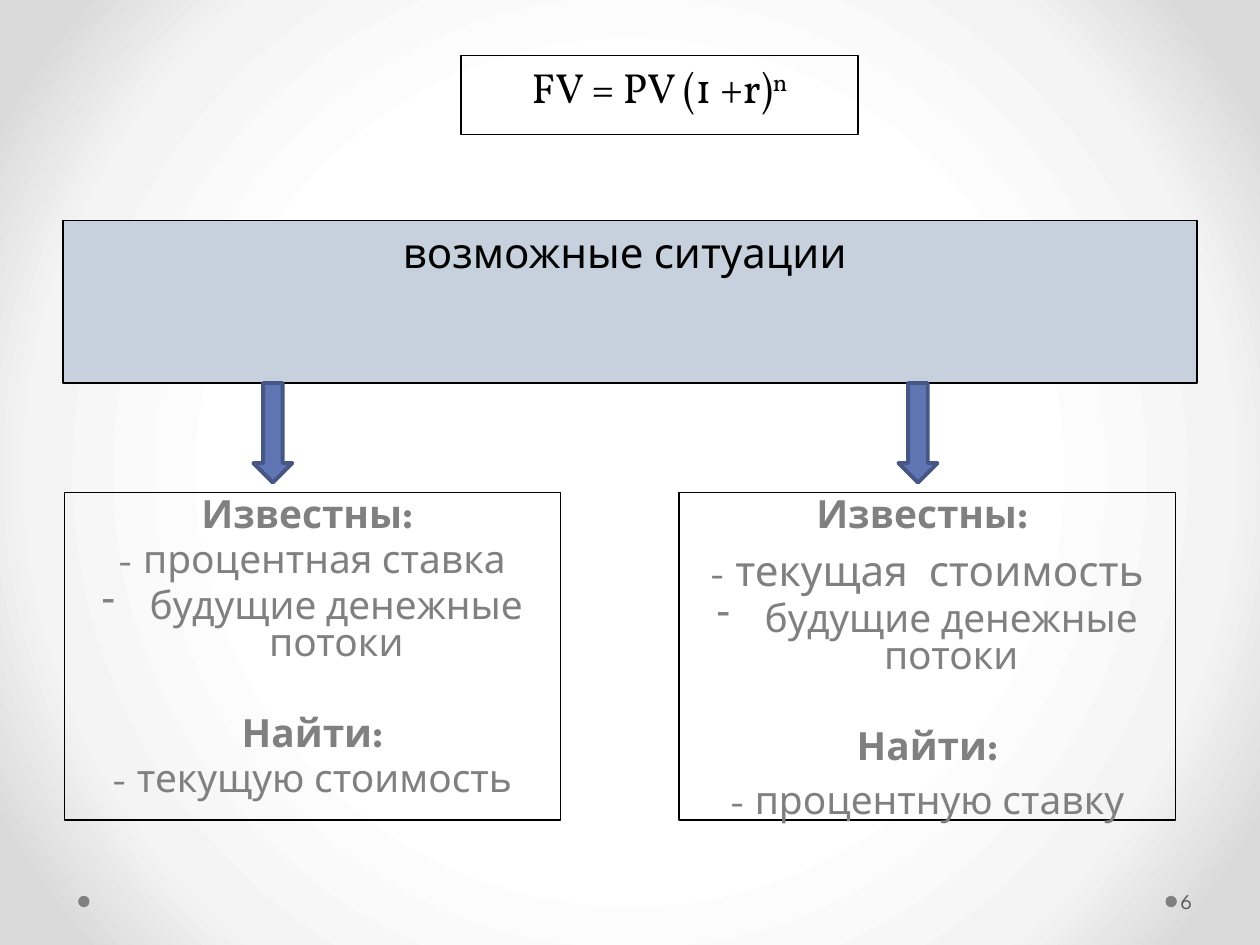
from dataclasses import dataclass

from lxml.etree import SubElement
from pptx import Presentation
from pptx.dml.color import RGBColor
from pptx.enum.shapes import MSO_SHAPE
from pptx.enum.text import MSO_ANCHOR, MSO_AUTO_SIZE, PP_ALIGN
from pptx.oxml import parse_xml
from pptx.oxml.ns import nsdecls, qn
from pptx.util import Inches, Pt

SANS = "League Spartan"
SERIF = "Vollkorn"
BLACK = "000000"
GRAY = "808080"
SMALL = 22.2
LARGE = 24.1
SECTION_GAP = 30.5


@dataclass
class Run:
    text: str
    size: float = SMALL
    bold: bool = False
    color: str = GRAY
    font: str = SANS
    superscript: bool = False


@dataclass
class Line:
    runs: list[Run]
    spacing: float = 0.8
    before: float = 4.5
    bullet: str = ""


@dataclass
class Situation:
    left: float
    arrow_left: float
    lines: list[Line]


KNOWN = Line([Run("Известны: ", bold=True)])
CASH_FLOWS = Line([Run("будущие денежные потоки")], bullet="-")
FIND = Line([Run("Найти:", bold=True)], before=SECTION_GAP)

SITUATIONS = [
    Situation(0.51, 2.01, [
        KNOWN,
        Line([Run("- процентная ставка")]),
        CASH_FLOWS,
        FIND,
        Line([Run("- текущую стоимость")]),
    ]),
    Situation(5.39, 7.13, [
        KNOWN,
        Line([Run("- "), Run("текущая  стоимость", LARGE)], spacing=1),
        CASH_FLOWS,
        FIND,
        Line([Run("- процентную ставку")], spacing=1),
    ]),
]
FORMULA = Line([
    Run("FV = PV (1 +r)", 24, color=BLACK, font=SERIF),
    Run("n", 24, color=BLACK, font=SERIF, superscript=True),
], spacing=1)
HEADING = Line([Run("возможные ситуации ", 24, color=BLACK)], spacing=1)


def rgb(color: str) -> RGBColor:
    return RGBColor.from_string(color)


def set_background(slide) -> None:
    """Give the slide a gradient that darkens from the centre outwards."""
    stops = "".join(
        f'<a:gs pos="{position * 1000}"><a:srgbClr val="{color}"/></a:gs>'
        for position, color in [(50, "FFFFFF"), (76, "F4F4F4"), (92, "DADADA")]
    )
    background = parse_xml(
        f'<p:bg {nsdecls("p", "a")}><p:bgPr><a:gradFill rotWithShape="1">'
        f'<a:gsLst>{stops}</a:gsLst><a:path path="circle">'
        '<a:fillToRect l="50000" t="50000" r="50000" b="50000"/></a:path>'
        '</a:gradFill><a:effectLst/></p:bgPr></p:bg>'
    )
    slide.element.cSld.insert(0, background)


def place(shape, left: float, top: float, width: float, height: float) -> None:
    shape.left, shape.top = Inches(left), Inches(top)
    shape.width, shape.height = Inches(width), Inches(height)


def style_shape(shape, fill: str = "", line: str = "", width: float = 0.75) -> None:
    """Set fill and outline; an empty colour means none."""
    if fill:
        shape.fill.solid()
        shape.fill.fore_color.rgb = rgb(fill)
    else:
        shape.fill.background()
    if line:
        shape.line.color.rgb = rgb(line)
        shape.line.width = Pt(width)
    else:
        shape.line.fill.background()


def add_preset(slide, kind: MSO_SHAPE, left: float, top: float, width: float, height: float):
    shape = slide.shapes.add_shape(
        kind, Inches(left), Inches(top), Inches(width), Inches(height))
    shape.shadow.inherit = False
    return shape


def format_run(run, source: Run) -> None:
    run.font.name = source.font
    run.font.size = Pt(source.size)
    run.font.bold = source.bold
    run.font.color.rgb = rgb(source.color)
    if source.superscript:
        run.font._element.set("baseline", "30000")


def write_lines(shape, lines: list[Line]) -> None:
    """Fill a shape with centred paragraphs that have a hanging indent."""
    text_frame = shape.text_frame
    text_frame.word_wrap = True
    text_frame.auto_size = MSO_AUTO_SIZE.NONE
    text_frame.vertical_anchor = MSO_ANCHOR.TOP
    for index, line in enumerate(lines):
        paragraph = text_frame.add_paragraph() if index else text_frame.paragraphs[0]
        paragraph.alignment = PP_ALIGN.CENTER
        paragraph.line_spacing = line.spacing
        paragraph.space_before = Pt(line.before)
        properties = paragraph._p.get_or_add_pPr()
        properties.set("marL", str(Inches(0.38)))
        properties.set("indent", str(-Inches(0.38)))
        if line.bullet:
            SubElement(properties, qn("a:buChar")).set("char", line.bullet)
        else:
            SubElement(properties, qn("a:buNone"))
        for source in line.runs:
            run = paragraph.add_run()
            run.text = source.text
            format_run(run, source)


def add_situation(slide, situation: Situation) -> None:
    arrow = add_preset(slide, MSO_SHAPE.UP_ARROW, situation.arrow_left, 3.04, 0.31, 0.79)
    arrow.rotation = 180
    style_shape(arrow, "6076B4", "475785", 2.25)
    box = add_preset(slide, MSO_SHAPE.RECTANGLE, situation.left, 3.91, 3.94, 2.6)
    style_shape(box, line=BLACK)
    write_lines(box, situation.lines)


def add_footer(slide, number: str) -> None:
    for left in (0.62, 9.25):
        dot = add_preset(slide, MSO_SHAPE.OVAL, left, 7.11, 0.09, 0.09)
        style_shape(dot, GRAY)
    box = slide.shapes.add_textbox(Inches(9.34), Inches(6.95), Inches(0.61), Inches(0.4))
    text_frame = box.text_frame
    text_frame.word_wrap = True
    text_frame.vertical_anchor = MSO_ANCHOR.MIDDLE
    text_frame.margin_left = Inches(0.03)
    text_frame.margin_right = Inches(0.05)
    text_frame.text = number
    format_run(text_frame.paragraphs[0].runs[0], Run(number, 12, color="595959"))


def main() -> None:
    presentation = Presentation()
    presentation.slide_width, presentation.slide_height = Inches(10), Inches(7.5)
    slide = presentation.slides.add_slide(presentation.slide_layouts[1])
    set_background(slide)
    add_footer(slide, "6")

    title, body = slide.shapes.title, slide.placeholders[1]
    place(title, 3.66, 0.44, 3.15, 0.63)
    style_shape(title, line=BLACK)
    write_lines(title, [FORMULA])
    place(body, 0.5, 1.75, 9, 1.29)
    style_shape(body, "C7D1DE", BLACK)
    write_lines(body, [HEADING])

    for situation in SITUATIONS:
        add_situation(slide, situation)
    presentation.save("out.pptx")


if __name__ == "__main__":
    main()
